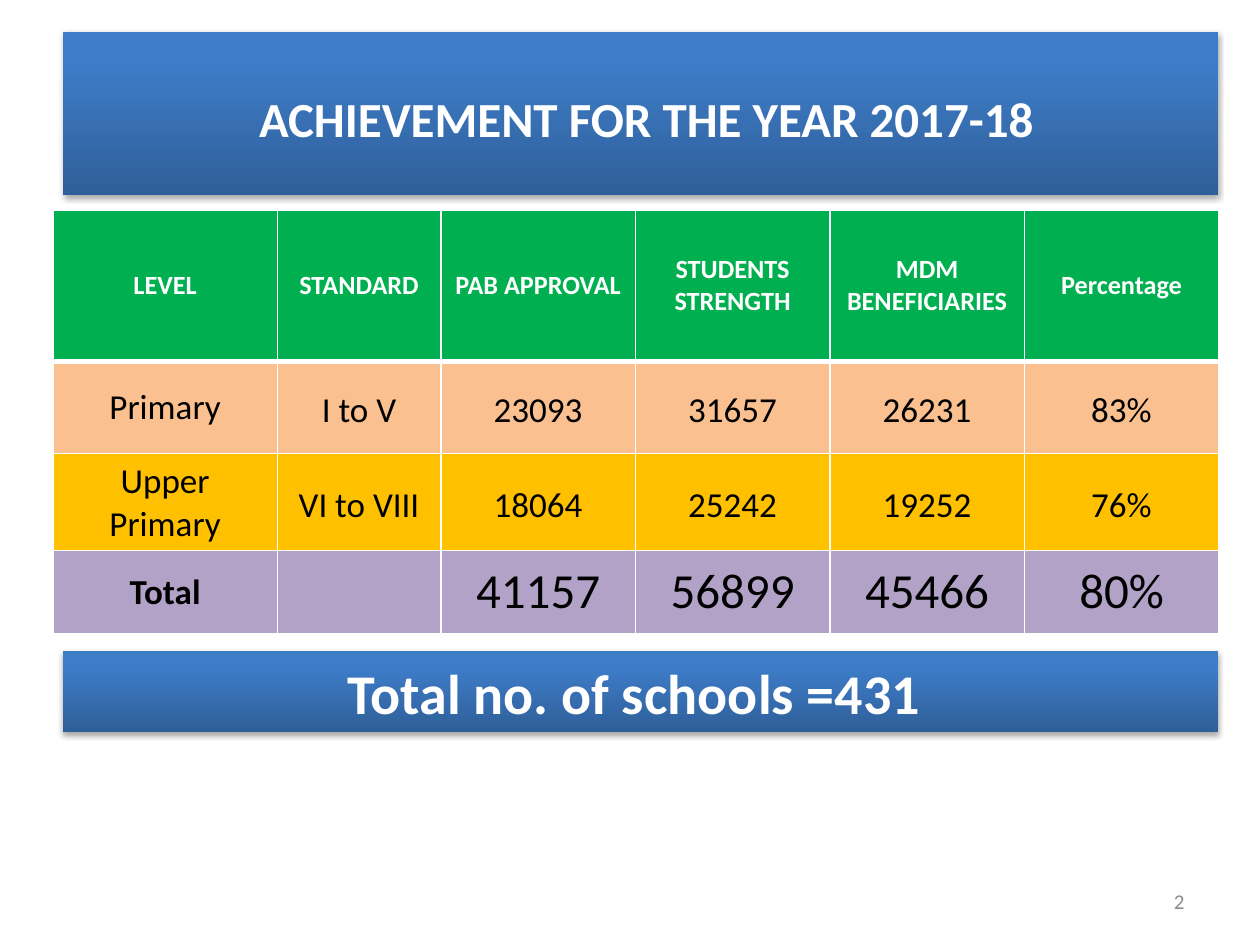
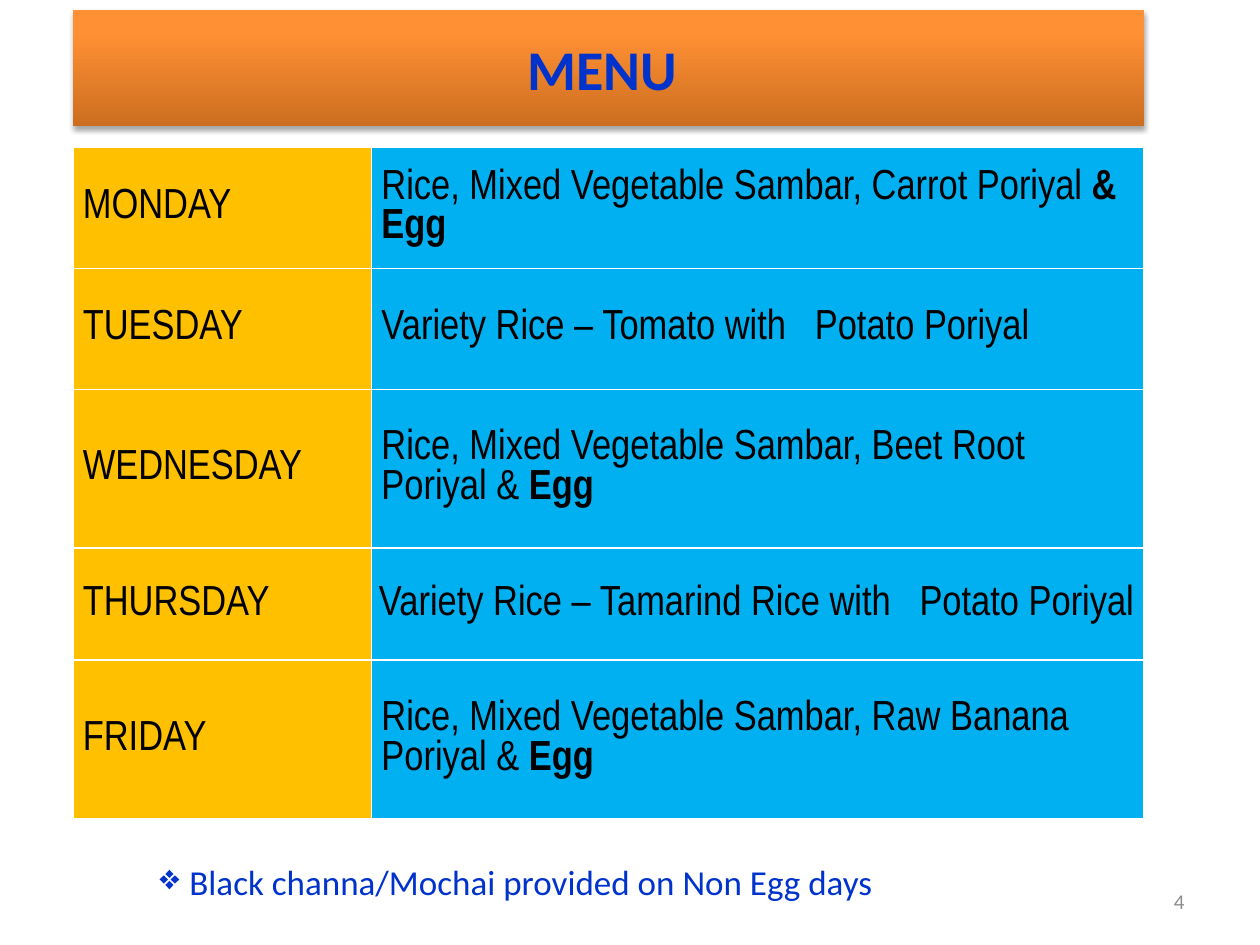
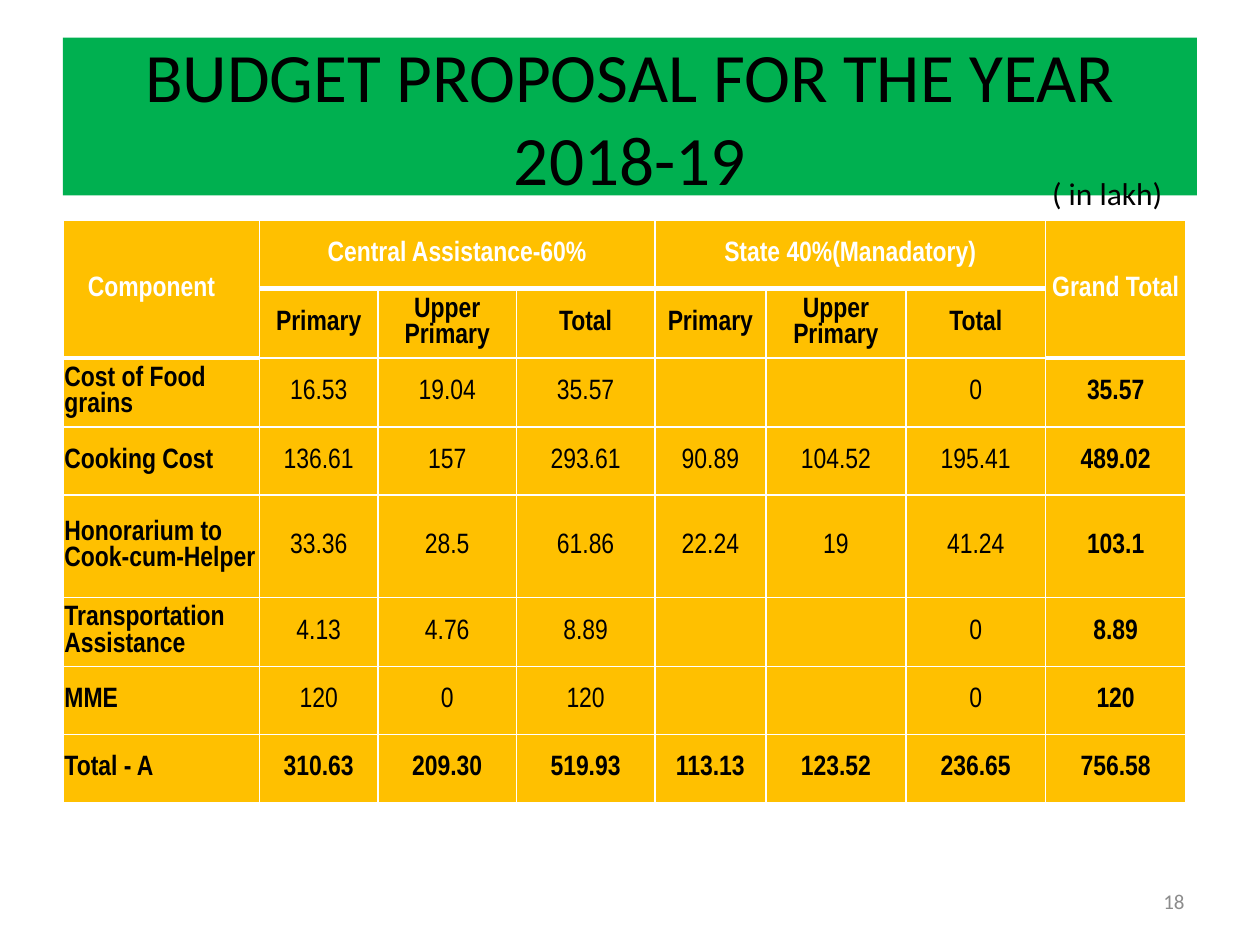
from lxml import etree
from pptx import Presentation
from pptx.dml.color import RGBColor as RGB
from pptx.enum.shapes import MSO_SHAPE as SHAPE
from pptx.enum.text import MSO_ANCHOR as ANCHOR, PP_ALIGN as ALIGN
from pptx.oxml.ns import qn
from pptx.util import Cm, Pt

WHITE = RGB(0xFF, 0xFF, 0xFF)
BLACK = RGB(0x00, 0x00, 0x00)
GREY = RGB(0x8C, 0x8C, 0x8C)
INK = RGB(0x00, 0x33, 0xCC)
GREEN = RGB(0x00, 0xB0, 0x50)
GOLD = RGB(0xFF, 0xC0, 0x00)
PEACH = RGB(0xFA, 0xC0, 0x90)
LILAC = RGB(0xB3, 0xA2, 0xC7)
SKY = RGB(0x00, 0xB0, 0xF0)
BLUES = (RGB(0x2F, 0x5F, 0x99), RGB(0x3D, 0x7C, 0xC7))
RUSTS = (RGB(0xCC, 0x6E, 0x20), RGB(0xFF, 0x90, 0x34))
SANS = "Calibri"
SLIM = "Arial Narrow"


def box(slide, at, text, size, color, align=ALIGN.CENTER, bold=False, tones=()):
    """Place text; one tone gives a flat band, two a shaded one with a shadow."""
    place = [Cm(n) for n in at]
    if tones:
        shape = slide.shapes.add_shape(SHAPE.RECTANGLE, *place)
        shape.line.fill.background()
        shape.shadow.inherit = False
    else:
        shape = slide.shapes.add_textbox(*place)
    if len(tones) == 1:
        shape.fill.solid()
        shape.fill.fore_color.rgb = tones[0]
    elif tones:
        shape.fill.gradient()
        shape.fill.gradient_angle = 90
        for stop, tone, spot in zip(shape.fill.gradient_stops, tones, (0, 0.8)):
            stop.color.rgb = tone
            stop.position = spot
        list_ = shape.element.spPr.find(qn("a:effectLst"))
        shade = etree.SubElement(list_, qn("a:outerShdw"), blurRad="40000",
                                 dist="23000", dir="5400000", rotWithShape="0")
        dark = etree.SubElement(shade, qn("a:srgbClr"), val="000000")
        etree.SubElement(dark, qn("a:alpha"), val="35000")
    frame = shape.text_frame
    frame.word_wrap = True
    frame.vertical_anchor = ANCHOR.MIDDLE
    para = frame.paragraphs[0]
    para.text = text
    para.alignment = align
    font = para.font
    font.name, font.size, font.bold = SANS, Pt(size), bold
    font.color.rgb = color
    return shape


def grid(slide, left, top, wides, highs, cells, face, size, pad, heavy=()):
    """Add a table with white rules; cells in heavy get a thick lower rule."""
    table = slide.shapes.add_table(len(highs), len(wides), Cm(left), Cm(top),
                                   Cm(sum(wides)), Cm(sum(highs))).table
    table.first_row = table.horz_banding = False
    for col, wide in zip(table.columns, wides):
        col.width = Cm(wide)
    for row, high in zip(table.rows, highs):
        row.height = Cm(high)
    for r, line in enumerate(cells):
        for c, text in enumerate(line):
            cell = table.cell(r, c)
            cell.margin_left = cell.margin_right = Cm(pad[0])
            cell.margin_top = cell.margin_bottom = Cm(pad[1])
            cell.vertical_anchor = ANCHOR.MIDDLE
            para = cell.text_frame.paragraphs[0]
            para.text = text
            para.alignment = ALIGN.CENTER
            para.font.name, para.font.size = face, Pt(size)
            para.font.color.rgb = BLACK
            props = cell._tc.get_or_add_tcPr()
            for side in "LRTB" if r == 0 else "LRB":
                thick = 3 if side == "B" and (r, c) in heavy else 1
                rule = etree.SubElement(props, qn("a:ln" + side), w=str(Pt(thick)))
                fill = etree.SubElement(rule, qn("a:solidFill"))
                etree.SubElement(fill, qn("a:srgbClr"), val=str(WHITE))
            cell.fill.solid()
            cell.fill.fore_color.rgb = GOLD
    return table


deck = Presentation()
deck.slide_width, deck.slide_height = Cm(25.4), Cm(19.05)
slides = []
for page in ("2", "4", "18"):
    slide = deck.slides.add_slide(deck.slide_layouts[6])
    box(slide, (18.21, 17.65, 5.92, 1.02), page, 12, GREY, ALIGN.RIGHT)
    slides.append(slide)
done, menu, budget = slides

# Achievement
title = box(done, (1.27, 0.64, 23.29, 3.3), " ACHIEVEMENT FOR THE YEAR 2017-18",
            28, WHITE, bold=True, tones=BLUES)
title.text_frame.margin_top = Cm(0.3)
box(done, (1.27, 13.13, 23.29, 1.63), "Total no. of schools =431 ",
    32, WHITE, bold=True, tones=BLUES)
levels = [
    ("LEVEL", "STANDARD", "PAB APPROVAL", "STUDENTS STRENGTH",
     "MDM BENEFICIARIES", "Percentage"),
    ("Primary", "I to V", "23093", "31657", "26231", "83%"),
    ("Upper Primary", "VI to VIII", "18064", "25242", "19252", "76%"),
    ("Total", "", "41157", "56899", "45466", "80%"),
]
table = grid(done, 1.07, 4.24, [4.52, 3.3] + [3.92] * 4, [3.05, 1.85, 1.85, 1.68],
             levels, SANS, 20, (0.25, 0.13), [(0, c) for c in range(6)])
for r, tone in enumerate((GREEN, PEACH, GOLD, LILAC)):
    for c in range(6):
        cell = table.cell(r, c)
        cell.fill.fore_color.rgb = tone
        para = cell.text_frame.paragraphs[0]
        para.font.bold = r == 0 or (r, c) == (3, 0)
        if r == 0:
            para.font.size = Pt(15)
            para.font.color.rgb = WHITE
        elif c and r == 3:
            para.font.size = Pt(28)
        elif c:
            para.line_spacing = 1.15
            para.space_after = Pt(10)

# Menu
box(menu, (1.47, 0.2, 21.59, 2.34), "MENU ", 32, INK, bold=True, tones=RUSTS)
meals = [
    ("MONDAY", "Rice, Mixed Vegetable Sambar, Carrot Poriyal ", "& Egg"),
    ("TUESDAY", "Variety Rice – Tomato with   Potato Poriyal", ""),
    ("WEDNESDAY", "Rice, Mixed Vegetable Sambar, Beet Root Poriyal & ", "Egg"),
    ("THURSDAY", "Variety Rice – Tamarind Rice with   Potato Poriyal", ""),
    ("FRIDAY", "Rice, Mixed Vegetable Sambar, Raw Banana Poriyal & ", "Egg"),
]
table = grid(menu, 1.47, 2.97, [6.02, 15.57], [2.44, 2.44, 3.2, 2.26, 3.2],
             [meal[:2] for meal in meals], SLIM, 24, (0.2, 0.1))
for r, (day, dish, egg) in enumerate(meals):
    for c in range(2):
        table.cell(r, c).text_frame.paragraphs[0].alignment = ALIGN.LEFT
    cell = table.cell(r, 1)
    cell.fill.fore_color.rgb = SKY
    if egg:
        run = cell.text_frame.paragraphs[0].add_run()
        run.text = egg
        run.font.bold = True
tight = table.cell(3, 1)
tight.margin_left = tight.margin_right = Cm(0.15)

note = box(menu, (2.97, 17.07, 19.48, 1.4),
           "Black channa/Mochai provided on Non Egg days", 20, INK, ALIGN.LEFT)
props = note.text_frame.paragraphs[0]._p.get_or_add_pPr()
props.set("marL", str(Cm(0.6)))
props.set("indent", str(-Cm(0.6)))
props.insert(0, etree.Element(qn("a:buChar"), char="❖"))

# Budget
box(budget, (1.27, 0.76, 22.86, 3.18), "BUDGET PROPOSAL FOR THE YEAR 2018-19",
    39.6, BLACK, tones=(GREEN,))
costs = [
    ("Component", "Central Assistance-60%", "", "",
     "State 40%(Manadatory)", "", "", "Grand Total"),
    ("", *("Primary", "Upper Primary", "Total") * 2, ""),
    ("Cost of Food grains", "16.53", "19.04", "35.57", "", "", "0", "35.57"),
    ("Cooking Cost", "136.61", "157", "293.61", "90.89", "104.52", "195.41", "489.02"),
    ("Honorarium to Cook-cum-Helper", "33.36", "28.5", "61.86",
     "22.24", "19", "41.24", "103.1"),
    ("Transportation Assistance", "4.13", "4.76", "8.89", "", "", "0", "8.89"),
    ("MME", "120", "0", "120", "", "", "0", "120"),
    ("Total - A", "310.63", "209.30", "519.93", "113.13", "123.52", "236.65", "756.58"),
]
table = grid(budget, 1.27, 4.45, [3.96, 2.39, 2.79, 2.79, 2.24] + [2.82] * 3,
             [1.37] * 4 + [2.06] + [1.37] * 3, costs, SLIM, 16, (0.03, 0.02),
             [(0, c) for c in range(8)] + [(1, 0), (1, 7)])
for r in range(8):
    for c in range(8):
        para = table.cell(r, c).text_frame.paragraphs[0]
        para.font.bold = r in (0, 1, 7) or c in (0, 7)
        if r == 0:
            para.font.color.rgb = WHITE
        if c == 0:
            para.alignment = ALIGN.LEFT
table.cell(0, 0).margin_left = Cm(0.5)
for r, c, down, over in ((0, 0, 1, 0), (0, 1, 0, 3), (0, 4, 0, 6), (0, 7, 1, 7)):
    table.cell(r, c).merge(table.cell(down, over))
box(budget, (20.96, 3.38, 3.38, 1.02), "( in lakh)", 18, BLACK, ALIGN.LEFT)

deck.save("out.pptx")
